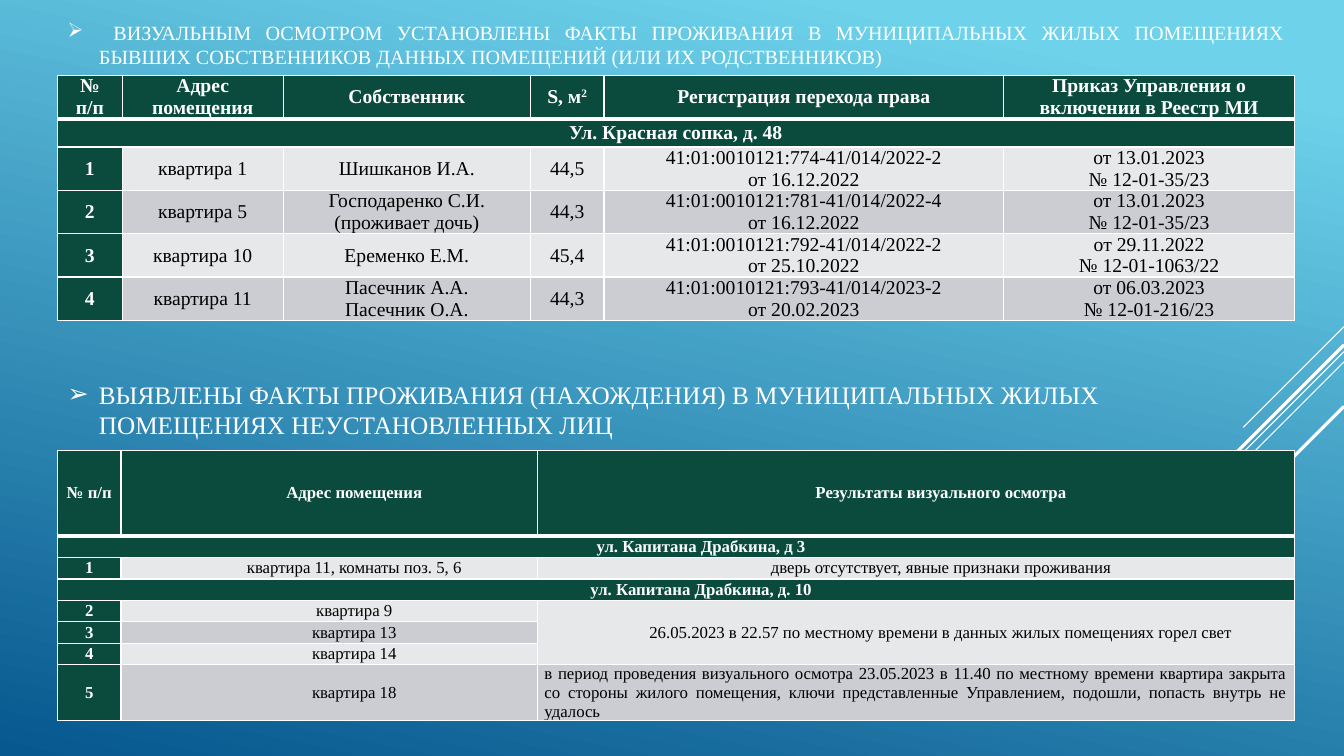
import dataclasses

import pptx
import pptx.dml.color
import pptx.enum.shapes
import pptx.enum.text
import pptx.oxml
import pptx.oxml.ns
import pptx.util
from lxml import etree

Cm, Pt = pptx.util.Cm, pptx.util.Pt
RGB = pptx.dml.color.RGBColor.from_string
ALIGN = pptx.enum.text.PP_ALIGN
ANCHOR = pptx.enum.text.MSO_ANCHOR
qn = pptx.oxml.ns.qn


@dataclasses.dataclass(frozen=True)
class Theme:
    font: str = "Times New Roman"
    sky: str = "6ED2EB"
    deep: str = "06588E"
    white: str = "FFFFFF"
    black: str = "000000"
    green: str = "0A4B3E"
    light: str = "E7E8EA"
    grey: str = "CCCDD2"
    title: float = 14.4
    heading: float = 18
    big_table: float = 14
    small_table: float = 12
    rule: float = 1
    header_rule: float = 3


class Deck:
    def __init__(self, theme):
        self.theme = theme
        self.prs = pptx.Presentation()
        self.prs.slide_width, self.prs.slide_height = Cm(33.87), Cm(19.05)
        self.s = self.prs.slides.add_slide(self.prs.slide_layouts[1])

    def background(self):
        fill = self.s.background.fill
        fill.gradient()
        fill.gradient_angle = 258
        stops = zip(fill.gradient_stops, (0.1, 1), (self.theme.sky, self.theme.deep))
        for stop, position, color in stops:
            stop.position = position
            stop.color.rgb = RGB(color)

    def style(self, p, size, color, bold=False):
        for r in p.runs:
            r.font.name = self.theme.font
            r.font.size = Pt(size)
            r.font.bold = bold
            r.font.color.rgb = RGB(color)

    def heading(self, sp, box, text, size, align, anchor):
        sp.left, sp.top, sp.width, sp.height = (Cm(v) for v in box)
        tf = sp.text_frame
        tf.text = text
        tf.word_wrap = True
        tf.auto_size = pptx.enum.text.MSO_AUTO_SIZE.NONE
        tf.vertical_anchor = anchor
        p = tf.paragraphs[0]
        p.alignment = align
        p.space_before = Pt(0)
        pPr = p._p.get_or_add_pPr()
        pPr.set("marL", str(Cm(0.79)))
        pPr.set("indent", str(-Cm(0.79)))
        etree.SubElement(pPr, qn("a:buChar")).set("char", "➢")
        self.style(p, size, self.theme.white)

    def diagonal(self, top, length, width):
        """Line falling at 45 degrees from the right edge to the left."""
        right = self.prs.slide_width
        c = self.s.shapes.add_connector(
            pptx.enum.shapes.MSO_CONNECTOR.STRAIGHT,
            right, Cm(top), right - Cm(length), Cm(top + length))
        c.line.color.rgb = RGB(self.theme.white)
        c.line.width = Pt(width)
        etree.SubElement(c._element.spPr, qn("a:effectLst"))

    def cell(self, cell, text, size, fill, color, bold, borders, align, indent):
        cell.margin_left = cell.margin_right = Cm(0.18)
        cell.margin_top = cell.margin_bottom = 0
        cell.vertical_anchor = ANCHOR.MIDDLE
        tcPr = cell._tc.get_or_add_tcPr()
        for side, width in borders.items():
            tcPr.append(pptx.oxml.parse_xml(
                f'<a:ln{side} {pptx.oxml.ns.nsdecls("a")} w="{Pt(width)}"><a:solidFill>'
                f'<a:srgbClr val="{self.theme.white}"/></a:solidFill></a:ln{side}>'))
        cell.fill.solid()
        cell.fill.fore_color.rgb = RGB(fill)
        # A caret marks the superscript at the end of a text
        base, _, power = text.partition("^")
        cell.text_frame.text = base
        if power:
            r = cell.text_frame.paragraphs[0].add_run()
            r.text = power
            r.font._element.set("baseline", "30000")
        for p in cell.text_frame.paragraphs:
            p.alignment = align
            if indent:
                p._p.get_or_add_pPr().set("marL", str(Cm(indent)))
            self.style(p, size, color, bold)

    def table(self, top, widths, heights, rows, size, indent=0, justified=()):
        """One-item rows are banners; a missing last item extends the cell above."""
        t = self.theme
        table = self.s.shapes.add_table(
            len(heights), len(widths), Cm(1.45), Cm(top),
            Cm(sum(widths)), Cm(sum(heights))).table
        table.horz_banding = False
        for column, width in zip(table.columns, widths):
            column.width = Cm(width)
        for row, height in zip(table.rows, heights):
            row.height = Cm(height)
        last = len(widths) - 1
        for i, texts in enumerate(rows):
            banner = len(texts) == 1
            borders = dict.fromkeys("LRTB", t.rule)
            if i < 2:
                borders["B" if i == 0 else "T"] = t.header_rule
            for j in range(len(widths)):
                dark = i == 0 or j == 0 or banner
                stripe = t.grey if i % 2 else t.light
                plain = (i, j) in justified
                indented = not plain and (banner or j > 0)
                self.cell(
                    table.cell(i, j), texts[j] if j < len(texts) else "", size,
                    t.green if dark else stripe, t.white if dark else t.black, dark,
                    borders, ALIGN.JUSTIFY if plain else ALIGN.CENTER,
                    indent if indented else 0)
            if banner:
                table.cell(i, 0).merge(table.cell(i, last))
        # Join last-column cells that have no text of their own
        open_rows = [i for i, texts in enumerate(rows) if len(texts) == last]
        if open_rows:
            table.cell(open_rows[0] - 1, last).merge(table.cell(open_rows[-1], last))


OWNERS = [
    ("№ п/п", "Адрес помещения", "Собственник", "S, м^2",
     "Регистрация перехода права", "Приказ Управления о включении в Реестр МИ"),
    ("Ул. Красная сопка, д. 48",),
    ("1", "квартира 1", "Шишканов И.А.", "44,5",
     "41:01:0010121:774-41/014/2022-2\nот 16.12.2022", "от 13.01.2023\n№ 12-01-35/23"),
    ("2", "квартира 5", "Господаренко С.И.\n(проживает дочь)", "44,3",
     "41:01:0010121:781-41/014/2022-4\nот 16.12.2022", "от 13.01.2023\n№ 12-01-35/23"),
    ("3", "квартира 10", "Еременко Е.М.", "45,4",
     "41:01:0010121:792-41/014/2022-2\nот 25.10.2022", "от 29.11.2022\n№ 12-01-1063/22"),
    ("4", "квартира 11", "Пасечник А.А.\nПасечник О.А.", "44,3",
     "41:01:0010121:793-41/014/2023-2\nот 20.02.2023", "от 06.03.2023\n№ 12-01-216/23"),
]
UNKNOWN = [
    ("№ п/п", "Адрес помещения", "Результаты визуального осмотра"),
    ("ул. Капитана Драбкина, д 3",),
    ("1", "квартира 11, комнаты поз. 5, 6", "дверь отсутствует, явные признаки проживания"),
    ("ул. Капитана Драбкина, д. 10",),
    ("2", "квартира 9",
     "26.05.2023 в 22.57 по местному времени в данных жилых помещениях горел свет"),
    ("3", "квартира 13"),
    ("4", "квартира 14"),
    ("5", "квартира 18",
     "в период проведения визуального осмотра 23.05.2023 в 11.40 по местному времени "
     "квартира закрыта со стороны жилого помещения, ключи представленные Управлением, "
     "подошли, попасть внутрь не удалось"),
]


def main():
    theme = Theme()
    deck = Deck(theme)

    # Background and diagonal lines
    deck.background()
    for top, length, width in [(8.23, 2.54, 0.75), (8.86, 8.28, 0.75), (9.12, 5.26, 0.75),
                               (8.69, 4.85, 2.25), (10.24, 3.53, 2.25)]:
        deck.diagonal(top, length, width)

    # Headings
    title, body = deck.s.placeholders
    deck.heading(
        title, (1.45, 0.36, 31.17, 1.52),
        " ВИЗУАЛЬНЫМ ОСМОТРОМ УСТАНОВЛЕНЫ ФАКТЫ ПРОЖИВАНИЯ В МУНИЦИПАЛЬНЫХ ЖИЛЫХ "
        "ПОМЕЩЕНИЯХ БЫВШИХ СОБСТВЕННИКОВ ДАННЫХ ПОМЕЩЕНИЙ (ИЛИ ИХ РОДСТВЕННИКОВ)",
        theme.title, ALIGN.JUSTIFY, ANCHOR.MIDDLE)
    deck.heading(
        body, (1.45, 9.42, 31.17, 1.8),
        "ВЫЯВЛЕНЫ ФАКТЫ ПРОЖИВАНИЯ (НАХОЖДЕНИЯ) В МУНИЦИПАЛЬНЫХ ЖИЛЫХ "
        "ПОМЕЩЕНИЯХ НЕУСТАНОВЛЕННЫХ ЛИЦ",
        theme.heading, ALIGN.LEFT, ANCHOR.TOP)

    # Tables
    deck.table(1.9, [1.63, 4.06, 6.23, 1.85, 10.08, 7.32], [1.04, 0.71] + [1.04] * 4,
               OWNERS, theme.big_table)
    deck.table(11.35, [1.6, 10.49, 19.08], [2.16] + [0.54] * 6 + [1.09],
               UNKNOWN, theme.small_table, indent=1.27, justified={(7, 2)})

    deck.prs.save("out.pptx")


if __name__ == "__main__":
    main()
